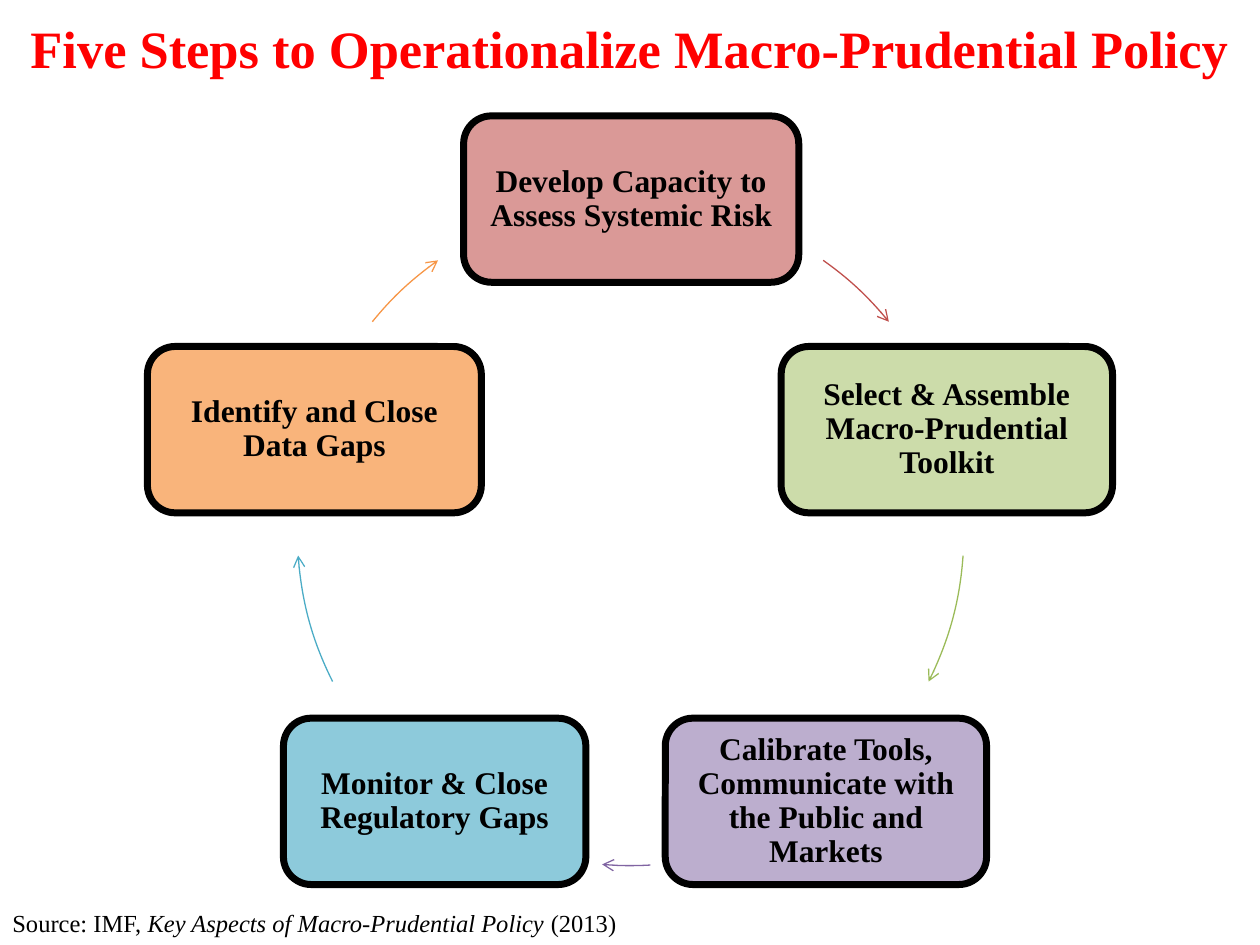
from dataclasses import dataclass

from lxml import etree
from pptx import Presentation
from pptx.dml.color import RGBColor
from pptx.enum.shapes import MSO_SHAPE
from pptx.enum.text import MSO_ANCHOR, MSO_AUTO_SIZE, PP_ALIGN
from pptx.oxml.ns import qn
from pptx.util import Inches, Pt

ROUNDED = MSO_SHAPE.ROUNDED_RECTANGLE
ARC = MSO_SHAPE.ARC
MIDDLE = MSO_ANCHOR.MIDDLE
CENTER = PP_ALIGN.CENTER
NO_FIT = MSO_AUTO_SIZE.NONE
GROW = MSO_AUTO_SIZE.SHAPE_TO_FIT_TEXT
TITLE_ONLY = 5


@dataclass(frozen=True)
class Theme:
    font: str = "Times New Roman"
    title_color: str = "FF0000"
    ink: str = "000000"
    title_size: int = 30
    step_size: int = 18
    source_size: int = 14
    border: float = 4
    arrow: float = 0.75


THEME = Theme()
STEP_HEIGHT = 1.32
STEP_INSET = 0.07
RING = (2.36, 1.58, 5.29, 5.29)

# text, left, top, width, colour, fill opacity, arrow start and end in degrees
STEPS = [
    ("Develop Capacity to Assess Systemic Risk",
     3.68, 0.92, 2.66, "C0504D", 58, 305.3, 320.8),
    ("Select & Assemble Macro-Prudential Toolkit",
     6.2, 2.75, 2.63, "9BBB59", 51, 4, 26.6),
    ("Calibrate Tools, Communicate with the Public and Markets",
     5.28, 5.7, 2.55, "8064A2", 52, 86.6, 94.9),
    ("Monitor & Close Regulatory Gaps",
     2.25, 5.7, 2.4, "4BACC6", 63, 153.4, 176),
    ("Identify and Close Data Gaps",
     1.17, 2.75, 2.65, "F79646", 71, 219.2, 234.7),
]
SOURCE = [
    ("Source: IMF, ", False),
    ("Key Aspects of Macro-Prudential Policy", True),
    (" (2013)", False),
]


def style_run(run, size, color, bold=False, italic=False):
    run.font.name = THEME.font
    run.font.size = Pt(size)
    run.font.color.rgb = RGBColor.from_string(color)
    run.font.bold = bold
    run.font.italic = italic


def add_title(slide, wording):
    title = slide.shapes.title
    title.left, title.top = Inches(0), Inches(0)
    title.width, title.height = Inches(10), Inches(0.75)
    frame = title.text_frame
    frame.text = wording
    frame.auto_size = NO_FIT
    frame.vertical_anchor = MIDDLE
    heading = frame.paragraphs[0]
    heading.alignment = CENTER
    style_run(heading.runs[0], THEME.title_size, THEME.title_color, bold=True)


def add_step(slide, wording, left, top, width, color, opacity):
    step = slide.shapes.add_shape(
        ROUNDED, Inches(left), Inches(top), Inches(width), Inches(STEP_HEIGHT))
    step.shadow.inherit = False
    step.fill.solid()
    step.fill.fore_color.rgb = RGBColor.from_string(color)
    tint = step.fill._xPr.find(qn("a:solidFill"))[0]
    etree.SubElement(tint, qn("a:alpha"), val=str(opacity * 1000))
    step.line.color.rgb = RGBColor.from_string(THEME.ink)
    step.line.width = Pt(THEME.border)
    frame = step.text_frame
    frame.text = wording
    frame.word_wrap = True
    frame.vertical_anchor = MIDDLE
    frame.margin_left = frame.margin_right = Inches(STEP_INSET)
    frame.margin_top = frame.margin_bottom = Inches(STEP_INSET)
    label = frame.paragraphs[0]
    label.alignment = CENTER
    label.line_spacing = 0.9
    style_run(label.runs[0], THEME.step_size, THEME.ink, bold=True)


def add_ring_arrow(slide, color, start, end):
    arrow = slide.shapes.add_shape(ARC, *map(Inches, RING))
    arrow.shadow.inherit = False
    arrow.fill.background()
    arrow.adjustments[0] = start * 0.6
    arrow.adjustments[1] = end * 0.6
    arrow.line.color.rgb = RGBColor.from_string(color)
    arrow.line.width = Pt(THEME.arrow)
    outline = arrow.line._get_or_add_ln()
    etree.SubElement(outline, qn("a:tailEnd"), type="arrow")


def add_source(slide, parts):
    source = slide.shapes.add_textbox(
        Inches(0), Inches(7.16), Inches(5.03), Inches(0.34))
    frame = source.text_frame
    frame.word_wrap = False
    frame.auto_size = GROW
    citation = frame.paragraphs[0]
    for wording, italic in parts:
        run = citation.add_run()
        run.text = wording
        style_run(run, THEME.source_size, THEME.ink, italic=italic)


def main():
    deck = Presentation()
    deck.slide_width, deck.slide_height = Inches(10), Inches(7.5)
    slide = deck.slides.add_slide(deck.slide_layouts[TITLE_ONLY])
    add_title(slide, "Five Steps to Operationalize Macro-Prudential Policy")
    for wording, left, top, width, color, opacity, start, end in STEPS:
        add_step(slide, wording, left, top, width, color, opacity)
        add_ring_arrow(slide, color, start, end)
    add_source(slide, SOURCE)
    deck.save("out.pptx")


if __name__ == "__main__":
    main()
